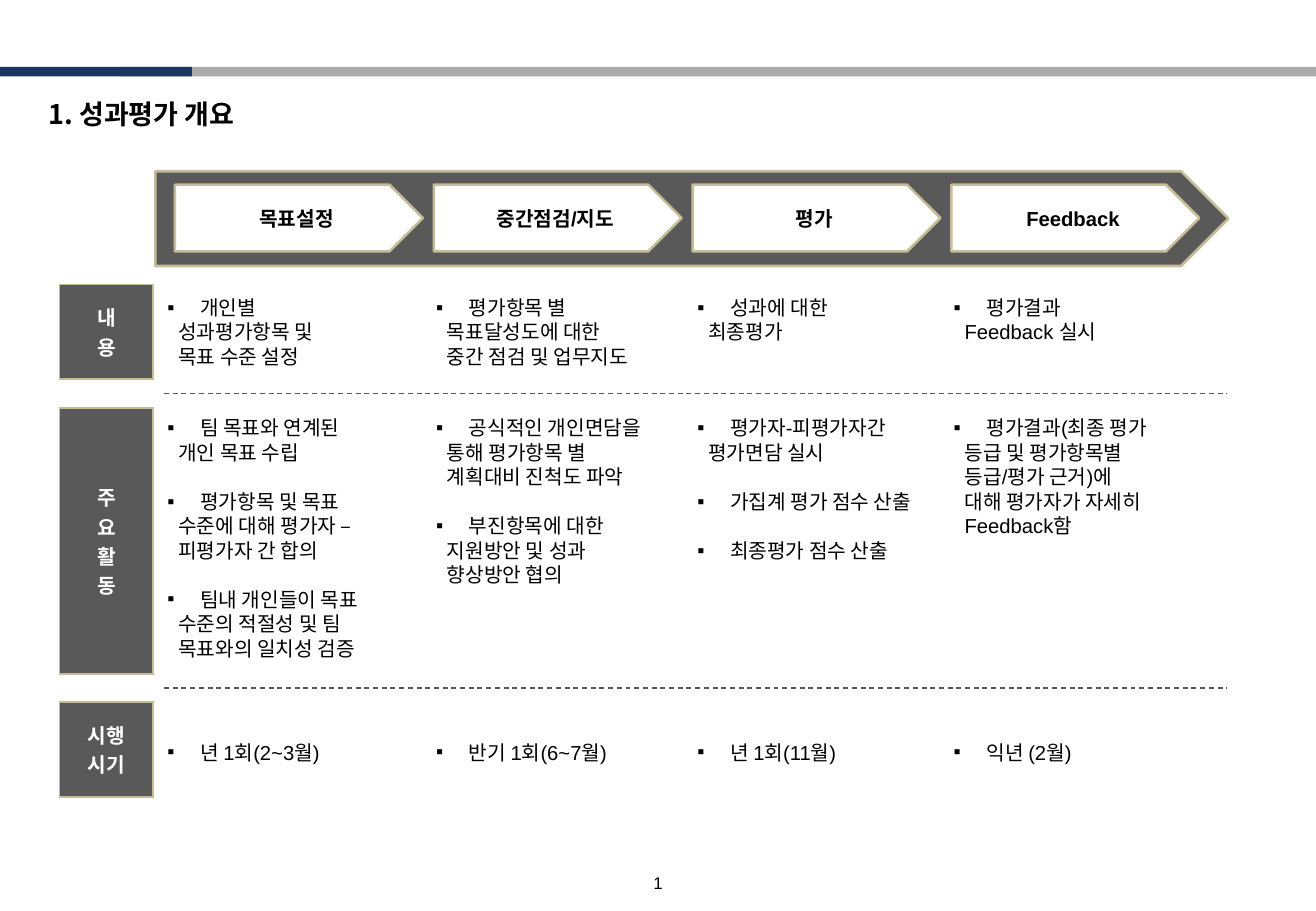
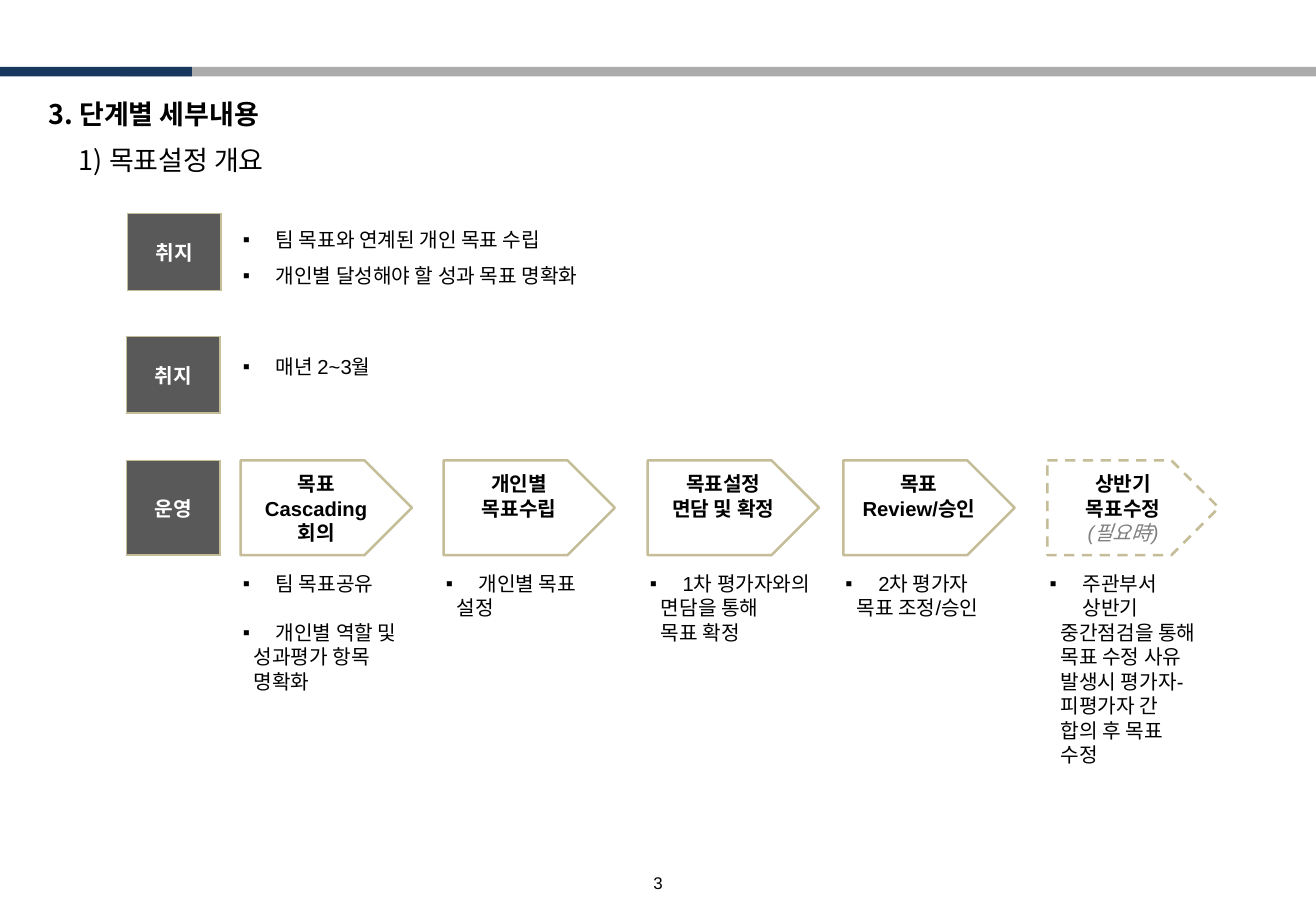
from lxml import etree
from pptx import Presentation
from pptx import util as u
from pptx.dml.color import RGBColor
from pptx.enum import dml, shapes, text
from pptx.oxml.ns import qn

NAVY = RGBColor(0x17, 0x37, 0x5E)
SILVER = RGBColor(0xAB, 0xAB, 0xAB)
CHARCOAL = RGBColor(0x59, 0x59, 0x59)
SAND = RGBColor(0xC4, 0xBD, 0x97)
GRAY = RGBColor(0x80, 0x80, 0x80)
BLACK = RGBColor(0, 0, 0)
WHITE = RGBColor(0xFF, 0xFF, 0xFF)
LATIN, HANGUL = "Arial", "Noto Sans CJK KR"

WIDTH, HEIGHT = 10.83, 7.5
PITCH = 14.5          # line pitch of 12 pt body text, in points
LABEL_WIDTH = 0.77
HANG, CONTINUED = 0.27, 0.09   # indents of bulleted and continuation lines
CENTER, LEFT = text.PP_ALIGN.CENTER, text.PP_ALIGN.LEFT


def write(frame, lines, size=12, color=BLACK, bold=False, align=LEFT,
          pitch=PITCH, latin=LATIN, margins=None):
    """Fill a text frame with one paragraph per line; return the paragraphs."""
    frame.word_wrap = True
    for side, inches in (margins or {}).items():
        setattr(frame, "margin_" + side, u.Inches(inches))
    for i, line in enumerate(lines):
        paragraph = frame.paragraphs[0] if i == 0 else frame.add_paragraph()
        paragraph.alignment = align
        if pitch:
            paragraph.line_spacing = u.Pt(pitch)
        run = paragraph.add_run()
        run.text = line
        run.font.color.rgb = color
        for name, value in {"size": u.Pt(size), "bold": bold, "name": latin}.items():
            setattr(run.font, name, value)
        etree.SubElement(run.font._element, qn("a:ea"), typeface=HANGUL)
    return frame.paragraphs


def add_block(slide, kind, box, fill, line=None):
    """Add a flat preset shape; box is left, top, width, height in inches."""
    block = slide.shapes.add_shape(kind, *map(u.Inches, box))
    block.shadow.inherit = False
    block.fill.solid()
    block.fill.fore_color.rgb = fill
    if line:
        block.line.color.rgb = line
        block.line.width = u.Pt(1.5)
    else:
        block.line.fill.background()
    return block


# Overview: a row of four steps over three labelled rows
OVERVIEW_LEFT, OVERVIEW_RIGHT = 1.28, 10.11
overview_steps = ["목표설정", "중간점검/지도", "평가", "Feedback"]
overview_labels = [(0.49, 2.34, 0.78, ["내", "용"]),
                   (0.49, 3.36, 2.19, ["주", "요", "활", "동"]),
                   (0.49, 5.78, 0.78, ["시행", "시기"])]
overview_columns = [1.28, 3.49, 5.64, 7.75]
# Each item is one bullet; its further lines continue below it
overview_rows = [
    (2.38, [["개인별\n성과평가항목 및\n목표 수준 설정"],
            ["평가항목 별\n목표달성도에 대한\n중간 점검 및 업무지도"],
            ["성과에 대한\n최종평가"],
            ["평가결과\nFeedback 실시"]]),
    (3.37, [["팀 목표와 연계된\n개인 목표 수립",
             "평가항목 및 목표\n수준에 대해 평가자 –\n피평가자 간 합의",
             "팀내 개인들이 목표\n수준의 적절성 및 팀\n목표와의 일치성 검증"],
            ["공식적인 개인면담을\n통해 평가항목 별\n계획대비 진척도 파악",
             "부진항목에 대한\n지원방안 및 성과\n향상방안 협의"],
            ["평가자-피평가자간\n평가면담 실시", "가집계 평가 점수 산출",
             "최종평가 점수 산출"],
            ["평가결과(최종 평가\n등급 및 평가항목별\n등급/평가 근거)에\n"
             "대해 평가자가 자세히\nFeedback함"]]),
    (6.04, [["년 1회(2~3월)"], ["반기 1회(6~7월)"], ["년 1회(11월)"],
            ["익년 (2월)"]]),
]
overview_notes = [(x, top, 2.04, items, PITCH, PITCH)
                  for top, row in overview_rows
                  for x, items in zip(overview_columns, row)]

# Goal setting: two labelled statements over a row of five steps
goal_labels = [(1.05, 1.76, 0.63, ["취지"]), (1.04, 2.77, 0.63, ["취지"]),
               (1.04, 3.79, 0.78, ["운영"])]
goal_steps = [
    (1.98, ["목표", "Cascading", "회의"],
     ["팀 목표공유", "개인별 역할 및\n성과평가 항목\n명확화"]),
    (3.65, ["개인별", "목표수립"], ["개인별 목표\n설정"]),
    (5.33, ["목표설정", "면담 및 확정"], ["1차 평가자와의\n면담을 통해\n목표 확정"]),
    (6.94, ["목표", "Review/승인"], ["2차 평가자\n목표 조정/승인"]),
    (8.62, ["상반기", "목표수정", "(필요時)"],
     ["주관부서 상반기\n중간점검을 통해\n목표 수정 사유\n발생시 평가자-\n"
      "피평가자 간\n합의 후 목표\n수정"]),
]
goal_notes = [
    (1.9, 1.72, 7.81, ["팀 목표와 연계된 개인 목표 수립",
                       "개인별 달성해야 할 성과 목표 명확화"], 21.6, 0),
    (1.9, 2.77, 7.81, ["매년 2~3월"], 21.6, 0),
] + [(x - 0.08, 4.65, 1.48 if x < 5 else 1.56, items, PITCH, PITCH)
     for x, _, items in goal_steps]

pages = [
    ("1", ["1. 성과평가 개요"], overview_labels, overview_notes),
    ("3", ["3. 단계별 세부내용", "1) 목표설정 개요"], goal_labels, goal_notes),
]

prs = Presentation()
prs.slide_width, prs.slide_height = u.Inches(WIDTH), u.Inches(HEIGHT)
slides = []

for number, headings, labels, notes in pages:
    slide = prs.slides.add_slide(prs.slide_layouts[5])
    slides.append(slide)
    for left, right, color in ((0.99, WIDTH, SILVER), (0, 1.58, NAVY)):
        add_block(slide, shapes.MSO_SHAPE.RECTANGLE,
                  (left, 0.55, right - left, 0.08), color)

    title = slide.shapes.title
    title_box = {"left": 0.3, "top": 0.75, "width": 10.24,
                 "height": 0.37 if len(headings) == 1 else 0.77}
    for name, inches in title_box.items():
        setattr(title, name, u.Inches(inches))
    title.text_frame.auto_size = text.MSO_AUTO_SIZE.NONE
    title.text_frame.vertical_anchor = text.MSO_ANCHOR.TOP
    heading, *subheadings = write(title.text_frame, headings, size=16, bold=True,
                                  pitch=19.3, latin=HANGUL)
    for subheading in subheadings:
        subheading.space_before = u.Pt(8)
        subheading.runs[0].font.bold = False
        subheading._p.get_or_add_pPr().set("marL", str(u.Inches(0.25)))

    footer = slide.shapes.add_textbox(*map(u.Inches, ((WIDTH - 2.33) / 2, 7.14,
                                                      2.33, 0.21))).text_frame
    footer.vertical_anchor = text.MSO_ANCHOR.BOTTOM
    write(footer, [number], size=10, align=CENTER, pitch=None,
          margins={"bottom": 0})[0].line_spacing = 0.7

    for left, top, height, lines in labels:
        table = slide.shapes.add_table(
            1, 1, *map(u.Inches, (left, top, LABEL_WIDTH, height))).table
        table.first_row = table.horz_banding = False
        cell = table.cell(0, 0)
        cell.margin_top = cell.margin_bottom = u.Inches(0.04)
        cell.vertical_anchor = text.MSO_ANCHOR.MIDDLE
        cell.fill.solid()
        cell.fill.fore_color.rgb = CHARCOAL
        for i, edge in enumerate(("lnL", "lnR", "lnT", "lnB")):
            border = etree.Element(qn("a:" + edge), w=str(u.Pt(1)))
            border_fill = etree.SubElement(border, qn("a:solidFill"))
            etree.SubElement(border_fill, qn("a:srgbClr"), val=str(SAND))
            cell._tc.get_or_add_tcPr().insert(i, border)
        write(cell.text_frame, lines, color=WHITE, bold=True, align=CENTER,
              pitch=None)

    for left, top, width, items, pitch, gap in notes:
        lines = [(line, i, j) for i, item in enumerate(items)
                 for j, line in enumerate(item.split("\n"))]
        height = 0.1 + (len(lines) * pitch + (len(items) - 1) * gap) / 72
        note = slide.shapes.add_textbox(*map(u.Inches, (left, top, width, height)))
        paragraphs = write(note.text_frame, [line for line, _, _ in lines],
                           pitch=pitch)
        for paragraph, (_, item_index, line_index) in zip(paragraphs, lines):
            properties = paragraph._p.get_or_add_pPr()
            if line_index:
                properties.set("marL", str(u.Inches(CONTINUED)))
                continue
            if item_index:
                paragraph.space_before = u.Pt(gap)
            properties.set("marL", str(u.Inches(HANG)))
            properties.set("indent", str(-u.Inches(HANG)))
            etree.SubElement(properties, qn("a:buFont"), typeface=LATIN)
            etree.SubElement(properties, qn("a:buChar"), char="▪")

overview, goal = slides
PENTAGON = shapes.MSO_SHAPE.PENTAGON

add_block(overview, PENTAGON,
          (OVERVIEW_LEFT, 1.41, OVERVIEW_RIGHT - OVERVIEW_LEFT, 0.78), CHARCOAL, SAND)
for i, step in enumerate(overview_steps):
    arrow = add_block(overview, PENTAGON, (1.44 + 2.13 * i, 1.52, 2.04, 0.55),
                      WHITE, SAND)
    arrow.text_frame.vertical_anchor = text.MSO_ANCHOR.MIDDLE
    write(arrow.text_frame, [step], bold=True, align=CENTER,
          margins={"left": 0.1, "right": 0})

for (_, top, height, _), (_, next_top, _, _) in zip(overview_labels,
                                                    overview_labels[1:]):
    y = u.Inches((top + height + next_top) / 2)
    divider = overview.shapes.add_connector(shapes.MSO_CONNECTOR.STRAIGHT,
                                            u.Inches(1.35), y, u.Inches(10.1), y)
    divider.line.color.rgb = CHARCOAL
    divider.line.width = u.Pt(0.75)
    divider.line.dash_style = dml.MSO_LINE.DASH
    etree.SubElement(divider._element.spPr, qn("a:effectLst"))

for left, step, _ in goal_steps:
    arrow = add_block(goal, PENTAGON, (left, 3.79, 1.41, 0.78), WHITE, SAND)
    arrow.text_frame.vertical_anchor = text.MSO_ANCHOR.TOP
    lines = write(arrow.text_frame, step, bold=True, align=CENTER,
                  margins={"left": 0.03, "right": 0, "top": 0.09, "bottom": 0})

# The last step is optional
arrow.line.dash_style = dml.MSO_LINE.DASH
condition = lines[-1].runs[0].font
condition.color.rgb = GRAY
condition.bold, condition.italic = False, True

prs.save("out.pptx")
